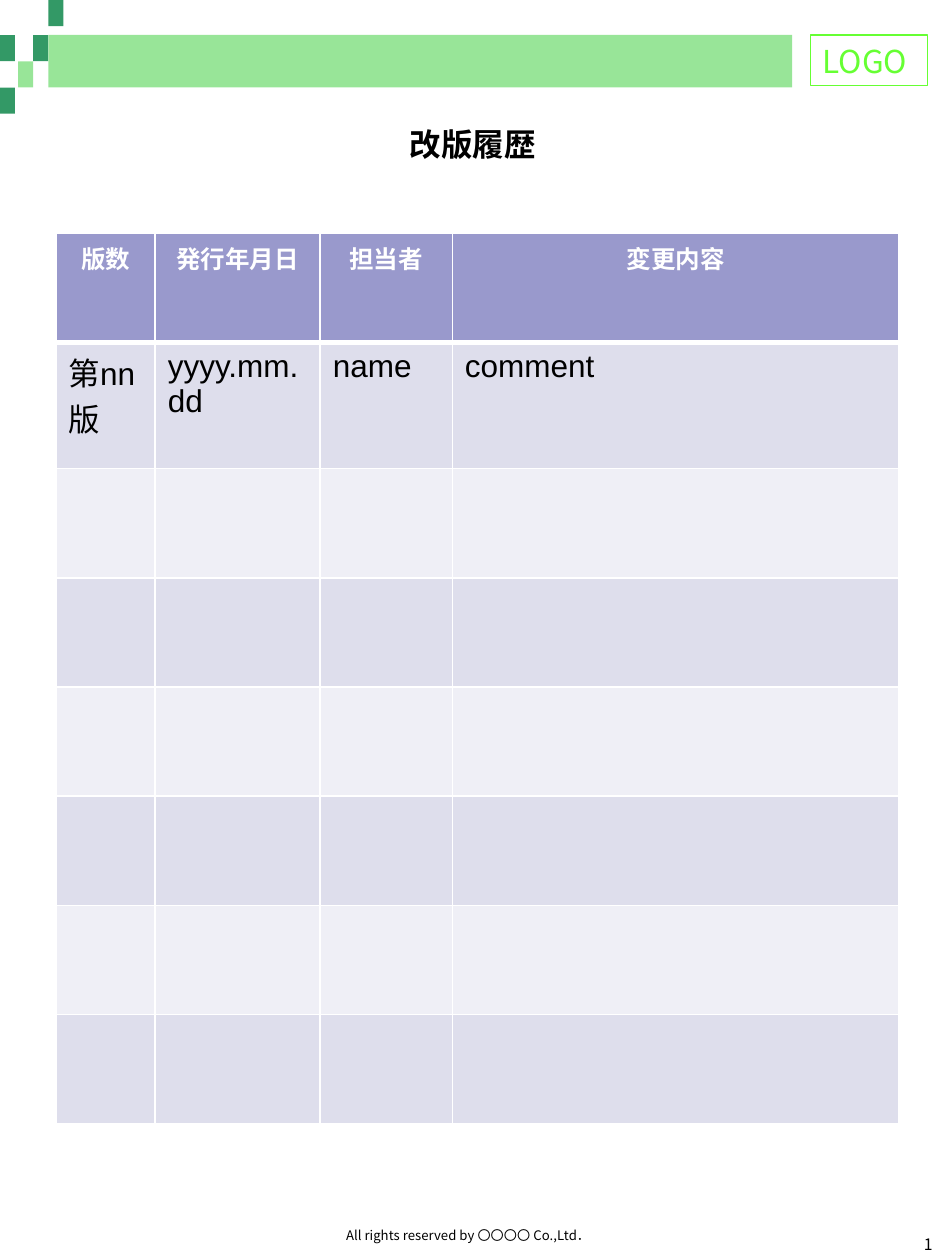
from dataclasses import dataclass

import lxml.etree
import pptx
import pptx.dml.color
import pptx.enum.shapes
import pptx.enum.text
import pptx.oxml.ns
import pptx.util

Pt = pptx.util.Pt
qn = pptx.oxml.ns.qn
ALIGN = pptx.enum.text.PP_ALIGN
ANCHOR = pptx.enum.text.MSO_ANCHOR

COLORS = {
    "light": "33CC33",
    "dark": "339966",
    "logo": "66FF33",
    "text": "000000",
    "white": "FFFFFF",
    "header": "9999CC",
    "odd": "DEDEEC",
    "even": "EFEFF6",
}
CJK = "Noto Sans CJK JP"
LATIN = "Arial"

TILE_W, TILE_H = 8.6, 15
TILE_X, TILE_Y = 10.4, 20

COL_WIDTHS = (56.7, 94.3, 75.5, 255.4)
ROW_COUNT, ROW_H = 8, 62.4
HEADERS = ("版数", "発行年月日", "担当者", "変更内容")
FIRST_ENTRY = ("第nn版", "yyyy.mm.dd", "name", "comment")


@dataclass
class Box:
    x: float
    y: float
    w: float
    h: float

    def lengths(self) -> tuple:
        return Pt(self.x), Pt(self.y), Pt(self.w), Pt(self.h)


@dataclass
class Block:
    box: Box
    color: str
    opacity: int = 100


@dataclass
class Style:
    size: float
    color: str = "text"
    font: str = CJK
    bold: bool = False
    align: ALIGN = ALIGN.LEFT
    anchor: ANCHOR = ANCHOR.TOP


def rgb(name: str) -> pptx.dml.color.RGBColor:
    return pptx.dml.color.RGBColor.from_string(COLORS[name])


def add_run(tf, text: str, style: Style) -> None:
    p = tf.paragraphs[0]
    p.alignment = style.align
    r = p.add_run()
    r.text = text
    r.font.size = Pt(style.size)
    r.font.bold = style.bold
    r.font.color.rgb = rgb(style.color)
    r.font.name = style.font
    ea = lxml.etree.SubElement(r._r.get_or_add_rPr(), qn("a:ea"))
    ea.set("typeface", CJK)


def fill_frame(sp, text: str, style: Style) -> None:
    tf = sp.text_frame
    tf.word_wrap = True
    tf.vertical_anchor = style.anchor
    add_run(tf, text, style)


def add_rect(s, box: Box):
    sp = s.shapes.add_shape(pptx.enum.shapes.MSO_SHAPE.RECTANGLE, *box.lengths())
    sp.shadow.inherit = False
    return sp


def add_block(s, block: Block) -> None:
    sp = add_rect(s, block.box)
    sp.fill.solid()
    sp.fill.fore_color.rgb = rgb(block.color)
    sp.line.fill.background()
    if block.opacity < 100:
        clr = sp._element.spPr.find(".//" + qn("a:srgbClr"))
        alpha = lxml.etree.SubElement(clr, qn("a:alpha"))
        alpha.set("val", str(block.opacity * 1000))


def add_logo_frame(s) -> None:
    sp = add_rect(s, Box(463, 20, 67, 29))
    sp.fill.background()
    sp.line.color.rgb = rgb("logo")
    sp.line.width = Pt(0.75)
    fill_frame(sp, "LOGO", Style(18, "logo", anchor=ANCHOR.MIDDLE))


def add_label(s, box: Box, text: str, style: Style) -> None:
    fill_frame(s.shapes.add_textbox(*box.lengths()), text, style)


def set_borders(cell, top: float, bottom: float) -> None:
    tc_pr = cell._tc.get_or_add_tcPr()
    for side, width in (("L", 1), ("R", 1), ("T", top), ("B", bottom)):
        ln = lxml.etree.SubElement(tc_pr, qn("a:ln" + side))
        ln.set("w", str(Pt(width)))
        solid = lxml.etree.SubElement(ln, qn("a:solidFill"))
        lxml.etree.SubElement(solid, qn("a:srgbClr")).set("val", COLORS["white"])


def add_history_table(s) -> None:
    box = Box(32, 133.4, sum(COL_WIDTHS), ROW_COUNT * ROW_H)
    table = s.shapes.add_table(ROW_COUNT, len(COL_WIDTHS), *box.lengths()).table
    for column, width in zip(table.columns, COL_WIDTHS):
        column.width = Pt(width)
    header_style = Style(14, "white", LATIN, True, ALIGN.CENTER)
    content = {0: (HEADERS, header_style), 1: (FIRST_ENTRY, Style(18, font=LATIN))}
    for i, row in enumerate(table.rows):
        row.height = Pt(ROW_H)
        color = "header" if i == 0 else "odd" if i % 2 else "even"
        for j, cell in enumerate(row.cells):
            set_borders(cell, 3 if i == 1 else 1, 3 if i == 0 else 1)
            cell.fill.solid()
            cell.fill.fore_color.rgb = rgb(color)
            if i in content:
                texts, style = content[i]
                add_run(cell.text_frame, texts[j], style)


def tile(x: float, row: int, color: str, opacity: int = 100) -> Block:
    return Block(Box(x, TILE_Y + row * TILE_H, TILE_W, TILE_H), color, opacity)


def main() -> None:
    prs = pptx.Presentation()
    prs.slide_width, prs.slide_height = Pt(540), Pt(720)
    s = prs.slides.add_slide(prs.slide_layouts[5])

    bar_x = TILE_X + 2 * TILE_W
    blocks = (
        tile(TILE_X, 1, "light", 50),
        Block(Box(bar_x, TILE_Y, 425, 2 * TILE_H), "light", 50),
        tile(0, 0, "dark"),
        tile(TILE_X + TILE_W, 0, "dark"),
        Block(Box(bar_x, 0, TILE_W, TILE_H), "dark"),
        tile(0, 2, "dark"),
    )
    for block in blocks:
        add_block(s, block)
    add_logo_frame(s)

    title = s.shapes.title
    title.left, title.top, title.width, title.height = Box(15, 65.5, 510, 34).lengths()
    fill_frame(title, "改版履歴",
               Style(18, bold=True, align=ALIGN.CENTER, anchor=ANCHOR.MIDDLE))

    add_label(s, Box(168.5, 697.7, 198, 22.3), "All rights reserved by 〇〇〇〇 Co.,Ltd．",
              Style(7.5, align=ALIGN.CENTER))
    add_history_table(s)
    add_label(s, Box(414, 672, 126, 48), "1",
              Style(9, align=ALIGN.RIGHT, anchor=ANCHOR.BOTTOM))
    prs.save("out.pptx")


if __name__ == "__main__":
    main()
